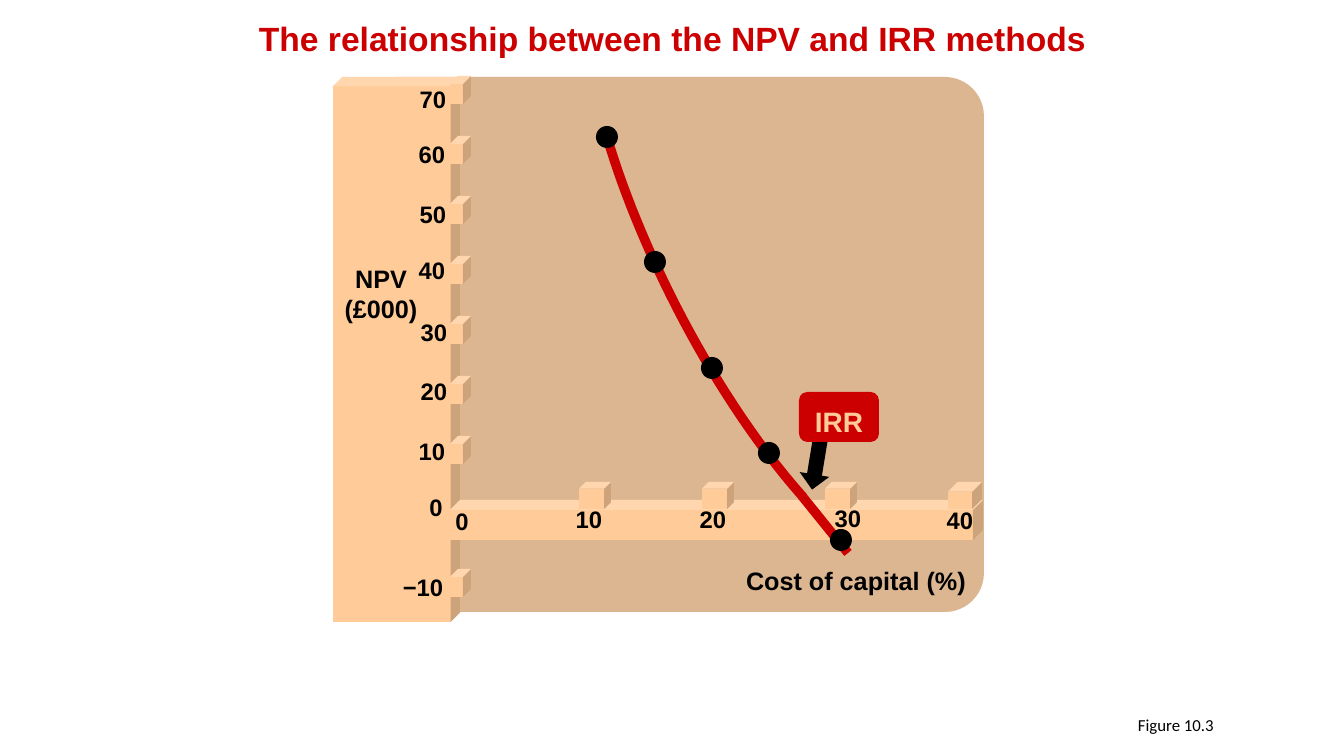
from pptx import Presentation
from pptx.dml.color import RGBColor
from pptx.enum.shapes import MSO_CONNECTOR, MSO_SHAPE
from pptx.enum.text import MSO_ANCHOR, PP_ALIGN
from pptx.oxml.ns import qn
from pptx.util import Emu, Pt
from lxml import etree

CUBE, ROUNDED = MSO_SHAPE.CUBE, MSO_SHAPE.ROUNDED_RECTANGLE
OVAL, DOWN_ARROW = MSO_SHAPE.OVAL, MSO_SHAPE.DOWN_ARROW
STRAIGHT = MSO_CONNECTOR.STRAIGHT
LEFT, CENTER = PP_ALIGN.LEFT, PP_ALIGN.CENTER
TOP = MSO_ANCHOR.TOP

EMU_PER_PX = 914400 / 100.8
RED, PEACH, TAN, BLACK = "CC0000", "FFCC99", "DBB691", "000000"

# Centre and top of each axis label, inside the chart box
Y_LABELS = [("70", 100, 3), ("60", 99, 58), ("50", 100, 118), ("40", 99, 174),
            ("30", 101, 236), ("20", 101, 295), ("10", 99, 355),
            ("0", 103, 411), ("−10", 90, 491)]
X_LABELS = [("0", 129, 425), ("10", 256, 423), ("20", 380, 423),
            ("30", 515, 422), ("40", 627, 424)]
POINTS = [(274, 60), (322, 185), (379, 291), (436, 376), (508, 463)]
CURVE = [(274, 60), (307, 171), (379, 317), (470, 420)]
CURVE_STEPS = 30


def px(length):
    return Emu(round(length * EMU_PER_PX))


def color(hex_string):
    return RGBColor.from_string(hex_string)


def write(shape, text, size=17, font="Arial", ink=BLACK, bold=True, align=CENTER):
    frame = shape.text_frame
    frame.word_wrap = True
    frame.vertical_anchor = TOP
    paragraph = frame.paragraphs[0]
    paragraph.alignment = align
    run = paragraph.add_run()
    run.text = text
    run.font.name, run.font.size, run.font.bold = font, Pt(size), bold
    run.font.color.rgb = color(ink)


def add_text(slide, text, left, top, width, height, **style):
    box = slide.shapes.add_textbox(px(left), px(top), px(width), px(height))
    write(box, text, **style)


def add_solid(slide, kind, left, top, width, height, fill, adjust=None):
    shape = slide.shapes.add_shape(kind, px(left), px(top), px(width), px(height))
    shape.shadow.inherit = False
    shape.fill.solid()
    shape.fill.fore_color.rgb = color(fill)
    shape.line.fill.background()
    if adjust is not None:
        shape.adjustments[0] = adjust
    return shape


def bezier(t):
    weights = ((1 - t) ** 3, 3 * t * (1 - t) ** 2, 3 * t * t * (1 - t), t ** 3)
    return [sum(w * point[axis] for w, point in zip(weights, CURVE)) for axis in (0, 1)]


def draw_axes(slide, left, top):
    add_solid(slide, ROUNDED, left + 27, top, 624, 535, TAN, 0.073)
    add_solid(slide, CUBE, left, top, 127, 545, PEACH, 0.073)
    add_solid(slide, CUBE, left + 117, top + 423, 533, 40, PEACH, 0.25)
    # Ticks
    for tick_top in [60 * step - 1 for step in range(7)] + [492]:
        add_solid(slide, CUBE, left + 117, top + tick_top, 21, 28, PEACH, 0.383)
    for step in range(4):
        width, adjust = (34, 0.361) if step == 3 else (32, 0.25)
        add_solid(slide, CUBE, left + 246 + 123 * step, top + 405, width, 27, PEACH, adjust)
    # Labels
    for text, center, label_top in Y_LABELS + X_LABELS:
        add_text(slide, text, left + center - 32, top + label_top, 64, 38)
    add_text(slide, "NPV (£000)", left - 2, top + 181, 100, 71, size=18)
    add_text(slide, "Cost of capital (%)", left + 397, top + 483, 252, 40, size=18)


def draw_curve(slide, left, top):
    vertices = [(px(left + x), px(top + y))
                for x, y in (bezier(i / CURVE_STEPS) for i in range(CURVE_STEPS + 1))]
    builder = slide.shapes.build_freeform(*vertices[0])
    builder.add_line_segments(vertices[1:], close=False)
    curve = builder.convert_to_shape()
    curve.shadow.inherit = False
    curve.fill.background()
    # Straight tail below the horizontal axis
    tail = slide.shapes.add_connector(STRAIGHT, px(left + 469), px(top + 419),
                                      px(left + 515), px(top + 476))
    etree.SubElement(tail._element.spPr, qn("a:effectLst"))
    for stroke in (curve, tail):
        stroke.line.color.rgb = color(RED)
        stroke.line.width = Pt(6.75)
    # Data points
    for x, y in POINTS:
        add_solid(slide, OVAL, left + x - 11, top + y - 11, 22, 22, BLACK)


def draw_irr_callout(slide, left, top):
    arrow = add_solid(slide, DOWN_ARROW, left + 3, top + 37, 30, 61, BLACK, 0.5)
    arrow.adjustments[1] = 0.51
    arrow.rotation = 9.3
    badge = add_solid(slide, ROUNDED, left, top, 80, 50, RED, 0.167)
    badge.text_frame.margin_top = px(10)
    write(badge, "IRR", size=20, ink=PEACH)


def draw_chart(slide, left, top):
    draw_axes(slide, left, top)
    draw_curve(slide, left, top)
    draw_irr_callout(slide, left + 466, top + 315)


def main():
    presentation = Presentation()
    presentation.slide_width, presentation.slide_height = px(1344), px(756)
    slide = presentation.slides.add_slide(presentation.slide_layouts[6])
    add_text(slide, "The relationship between the NPV and IRR methods",
             201, 13, 943, 50, size=24, ink=RED)
    draw_chart(slide, 333, 77)
    add_text(slide, "Figure 10.3", 1128, 710, 110, 30,
             size=12, font="Calibri", bold=False, align=LEFT)
    presentation.save("out.pptx")


if __name__ == "__main__":
    main()
